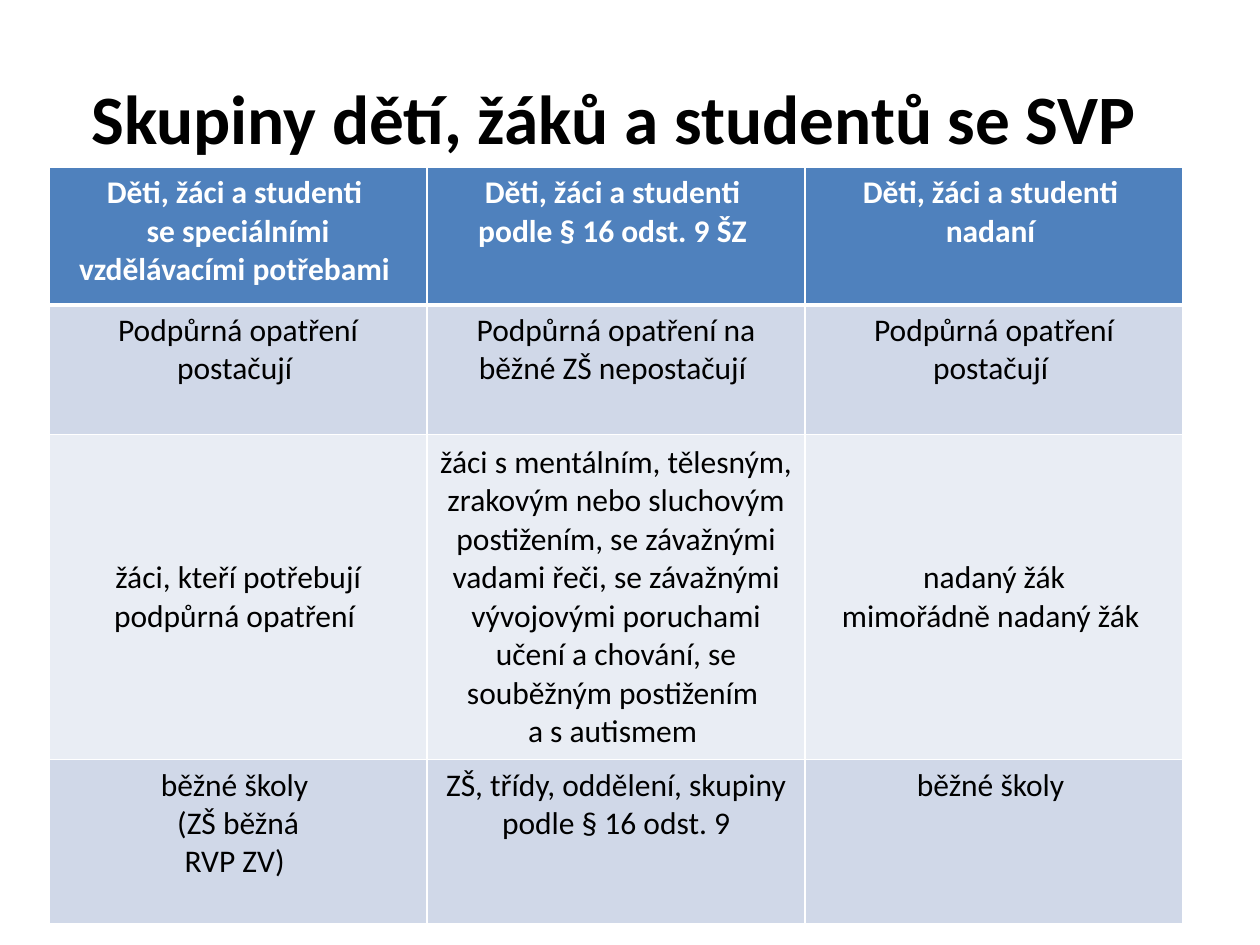
from dataclasses import dataclass

from lxml.etree import SubElement
from pptx import Presentation
from pptx.dml.color import RGBColor
from pptx.enum.text import MSO_ANCHOR, PP_ALIGN
from pptx.oxml.ns import qn
from pptx.slide import Slide
from pptx.util import Inches, Pt

COLORS = {
    "text": "000000",
    "header_text": "FFFFFF",
    "header": "4F81BD",
    "band_dark": "D0D8E8",
    "band_light": "E9EDF4",
    "border": "FFFFFF",
}

ROW_HEIGHTS = [1.09, 1.03, 2.58, 1.3]
GROUPS = [
    [
        "Děti, žáci a studenti \nse speciálními vzdělávacími potřebami ",
        "Děti, žáci a studenti \npodle § 16 odst. 9 ŠZ ",
        "Děti, žáci a studenti \nnadaní ",
    ],
    [
        "Podpůrná opatření postačují ",
        "Podpůrná opatření na běžné ZŠ nepostačují ",
        "Podpůrná opatření postačují ",
    ],
    [
        "žáci, kteří potřebují podpůrná opatření ",
        "žáci s mentálním, tělesným, zrakovým nebo sluchovým postižením, "
        "se závažnými vadami řeči, se závažnými vývojovými poruchami učení "
        "a chování, se souběžným postižením \va s autismem ",
        "nadaný žák\nmimořádně nadaný žák ",
    ],
    [
        "běžné školy \n(ZŠ běžná\nRVP ZV) ",
        "ZŠ, třídy, oddělení, skupiny podle § 16 odst. 9",
        "běžné školy ",
    ],
]


@dataclass
class SlideBuilder:
    """Holds the style and the current slide, and draws its elements."""

    page: Slide
    font: str = "Calibri"

    def style(self, frame, size, color, bold):
        for para in frame.paragraphs:
            para.alignment = PP_ALIGN.CENTER
            para.font.name = self.font
            para.font.size = Pt(size)
            para.font.bold = bold
            para.font.color.rgb = RGBColor.from_string(COLORS[color])

    def title(self, text, left, top, width, height):
        box = self.page.shapes.title
        box.left, box.top = Inches(left), Inches(top)
        box.width, box.height = Inches(width), Inches(height)
        frame = box.text_frame
        frame.text = text
        frame.vertical_anchor = MSO_ANCHOR.MIDDLE
        frame.margin_right = Inches(0.35)
        self.style(frame, 39.6, "text", True)

    def borders(self, cell, widths):
        properties = cell._tc.get_or_add_tcPr()
        for index, (side, width) in enumerate(widths.items()):
            line = SubElement(properties, qn(f"a:ln{side}"), w=str(Pt(width)))
            fill = SubElement(line, qn("a:solidFill"))
            SubElement(fill, qn("a:srgbClr"), val=COLORS["border"])
            properties.insert(index, line)

    def table(self, rows, heights, left, top, width):
        table = self.page.shapes.add_table(
            len(rows), len(rows[0]), Inches(left), Inches(top),
            Inches(width), Inches(sum(heights)),
        ).table
        for row, (texts, height) in enumerate(zip(rows, heights)):
            table.rows[row].height = Inches(height)
            header = row == 0
            band = "header" if header else "band_dark" if row % 2 else "band_light"
            for column, text in enumerate(texts):
                cell = table.cell(row, column)
                cell.text = text
                cell.vertical_anchor = MSO_ANCHOR.MIDDLE if row == 2 else MSO_ANCHOR.TOP
                cell.fill.solid()
                cell.fill.fore_color.rgb = RGBColor.from_string(COLORS[band])
                self.style(cell.text_frame, 18, "header_text" if header else "text", header)
                self.borders(cell, {
                    "L": 1, "R": 1,
                    "T": 3 if row == 1 else 1,
                    "B": 3 if header else 1,
                })


def main():
    deck = Presentation()
    deck.slide_width, deck.slide_height = Inches(10), Inches(7.5)
    builder = SlideBuilder(deck.slides.add_slide(deck.slide_layouts[5]))
    builder.title("Skupiny dětí, žáků a studentů se SVP", 0.5, 0.3, 9, 1.25)
    builder.table(GROUPS, ROW_HEIGHTS, 0.39, 1.33, 9)
    deck.save("out.pptx")


if __name__ == "__main__":
    main()
